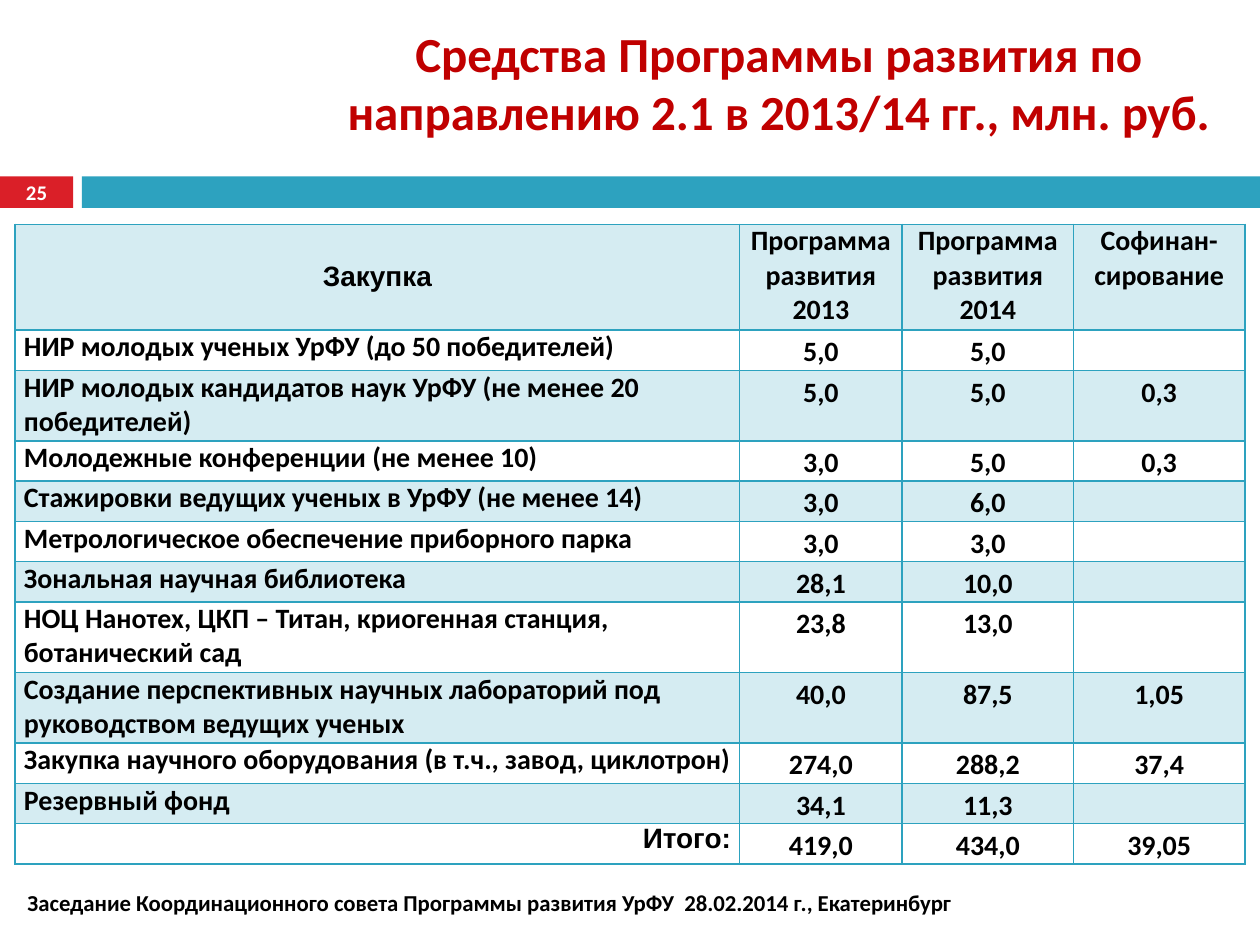
from lxml.etree import SubElement
from pptx import Presentation
from pptx.dml.color import RGBColor
from pptx.enum.shapes import MSO_SHAPE
from pptx.enum.text import MSO_ANCHOR, PP_ALIGN
from pptx.oxml.ns import qn
from pptx.util import Inches, Pt

RED = RGBColor(0xDA, 0x1F, 0x28)
TEAL = RGBColor(0x2D, 0xA2, 0xBF)
PALE = RGBColor(0xD5, 0xEC, 0xF2)
TITLE_RED = RGBColor(0xC0, 0x00, 0x00)
BLACK = RGBColor(0x00, 0x00, 0x00)
WHITE = RGBColor(0xFF, 0xFF, 0xFF)

COL_WIDTHS = [5.75, 1.29, 1.36, 1.36]
HEADER_HEIGHT, LINE_HEIGHT, DOUBLE_HEIGHT = 0.84, 0.32, 0.56
DOUBLE_ROWS = (2, 7, 8)
ROWS = [
    ("Закупка", "Программа развития 2013", "Программа развития 2014", "Софинан-сирование"),
    ("НИР молодых ученых УрФУ (до 50 победителей)", "5,0", "5,0", ""),
    ("НИР молодых кандидатов наук УрФУ (не менее 20 победителей)", "5,0", "5,0", "0,3"),
    ("Молодежные конференции (не менее 10)", "3,0", "5,0", "0,3"),
    ("Стажировки ведущих ученых в УрФУ (не менее 14)", "3,0", "6,0", ""),
    ("Метрологическое обеспечение приборного парка", "3,0", "3,0", ""),
    ("Зональная научная библиотека", "28,1", "10,0", ""),
    ("НОЦ Нанотех, ЦКП – Титан, криогенная станция, ботанический сад", "23,8", "13,0", ""),
    ("Создание перспективных научных лабораторий под руководством ведущих ученых",
     "40,0", "87,5", "1,05"),
    ("Закупка научного оборудования (в т.ч., завод, циклотрон)", "274,0", "288,2", "37,4"),
    ("Резервный фонд", "34,1", "11,3", ""),
    ("Итого:", "419,0", "434,0", "39,05"),
]


def write(tf, text, size, color=BLACK, align=PP_ALIGN.LEFT, font="Calibri"):
    tf.text = text
    p = tf.paragraphs[0]
    p.alignment = align
    for r in p.runs:
        r.font.name = font
        r.font.size = Pt(size)
        r.font.bold = True
        r.font.color.rgb = color
    return p


def add_text(s, box, text, size, color=BLACK, align=PP_ALIGN.LEFT, wrap=True):
    tf = s.shapes.add_textbox(*map(Inches, box)).text_frame
    tf.word_wrap = wrap
    tf.vertical_anchor = MSO_ANCHOR.MIDDLE
    write(tf, text, size, color, align)


def add_bar(s, box, color):
    sp = s.shapes.add_shape(MSO_SHAPE.RECTANGLE, *map(Inches, box))
    sp.shadow.inherit = False
    sp.fill.solid()
    sp.fill.fore_color.rgb = color
    sp.line.fill.background()
    return sp


def add_band(s, box, number):
    x, y, w, h = box
    number_width, gap = 0.58, 0.07
    sp = add_bar(s, (x, y, number_width, h), RED)
    tf = sp.text_frame
    tf.margin_top = tf.margin_bottom = 0
    tf.vertical_anchor = MSO_ANCHOR.MIDDLE
    write(tf, number, 11.9, WHITE, PP_ALIGN.CENTER)
    offset = number_width + gap
    add_bar(s, (x + offset, y, w - offset, h), TEAL)


def add_borders(cell):
    tc_pr = cell._tc.get_or_add_tcPr()
    for side in ("lnL", "lnR", "lnT", "lnB"):
        ln = SubElement(tc_pr, qn(f"a:{side}"), w=str(Pt(1)))
        fill = SubElement(ln, qn("a:solidFill"))
        SubElement(fill, qn("a:srgbClr"), val=str(TEAL))


def fill_cell(cell, text, row, col):
    header, total = row == 0, row == len(ROWS) - 1
    add_borders(cell)
    if row % 2 == 0:
        cell.fill.solid()
        cell.fill.fore_color.rgb = PALE
    else:
        cell.fill.background()
    cell.margin_left = cell.margin_right = Inches(0.07)
    cell.margin_top = cell.margin_bottom = 0
    align = PP_ALIGN.CENTER
    if col == 0 and not header:
        align = PP_ALIGN.RIGHT if total else PP_ALIGN.LEFT
    font = "Arial" if col == 0 and (header or total) else "Calibri"
    p = write(cell.text_frame, text, 16, align=align, font=font)
    if header and col == 0:
        cell.vertical_anchor = MSO_ANCHOR.MIDDLE
        cell.margin_left = cell.margin_right = Inches(0.04)
    if text and col and not header:
        p.line_spacing = 1.15


def add_funding_table(s, box):
    table = s.shapes.add_table(len(ROWS), len(COL_WIDTHS), *map(Inches, box)).table
    for column, width in zip(table.columns, COL_WIDTHS):
        column.width = Inches(width)
    for i, values in enumerate(ROWS):
        height = DOUBLE_HEIGHT if i in DOUBLE_ROWS else LINE_HEIGHT
        table.rows[i].height = Inches(height if i else HEADER_HEIGHT)
        for j, text in enumerate(values):
            fill_cell(table.cell(i, j), text, i, j)


def main():
    prs = Presentation()
    prs.slide_width, prs.slide_height = Inches(10), Inches(7.5)
    s = prs.slides.add_slide(prs.slide_layouts[6])
    add_band(s, (0, 1.4, 10, 0.25), "25")
    add_text(s, (2.48, 0.07, 7.4, 1.16),
             "Средства Программы развития по направлению 2.1 в 2013/14 гг., млн. руб.",
             28, TITLE_RED, PP_ALIGN.CENTER)
    add_funding_table(s, (0.12, 1.78, 9.76, 5.12))
    add_text(s, (0.12, 7, 7.64, 0.32),
             "Заседание Координационного совета Программы развития УрФУ  28.02.2014 г., Екатеринбург",
             13, wrap=False)
    prs.save("out.pptx")


if __name__ == "__main__":
    main()
